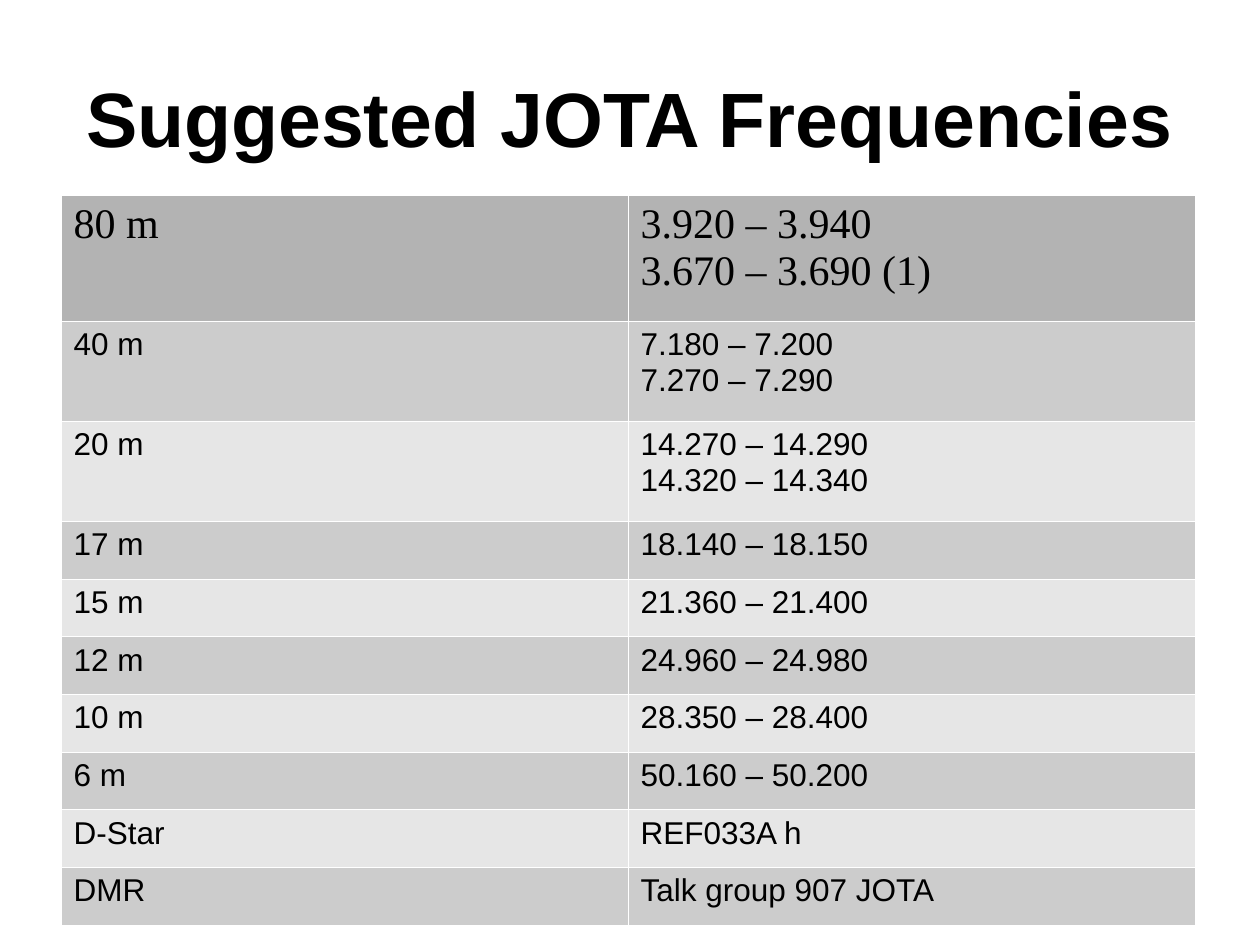
import pptx
import pptx.dml.color
import pptx.enum.text
import pptx.oxml
import pptx.oxml.ns
import pptx.util

RGBColor = pptx.dml.color.RGBColor
BLACK = RGBColor(0x00, 0x00, 0x00)
HEADER_GREY = RGBColor(0xB3, 0xB3, 0xB3)
BAND_GREYS = (RGBColor(0xCC, 0xCC, 0xCC), RGBColor(0xE6, 0xE6, 0xE6))
RULE_WHITE = RGBColor(0xFF, 0xFF, 0xFF)

PX_PER_INCH = 126
COLUMN_WIDTH = 567
HEADER_HEIGHT = 126
TWO_LINE_HEIGHT = 100
ONE_LINES_HEIGHT = 404  # shared equally by all one-line rows

FREQUENCIES = [
    ("80 m", "3.920 – 3.940\n3.670 – 3.690 (1)"),
    ("40 m", "7.180 – 7.200\n7.270 – 7.290"),
    ("20 m", "14.270 – 14.290\n14.320 – 14.340"),
    ("17 m", "18.140 – 18.150"),
    ("15 m", "21.360 – 21.400"),
    ("12 m", "24.960 – 24.980"),
    ("10 m", "28.350 – 28.400"),
    ("6 m", "50.160 – 50.200"),
    ("D-Star", "REF033A h"),
    ("DMR", "Talk group 907 JOTA"),
]


def px(length):
    return pptx.util.Emu(round(length * 914400 / PX_PER_INCH))


def write_text(frame, text, size=18, font="Arial", bold=False, align=None):
    """Write one paragraph per line of text."""
    frame.text = text
    for paragraph in frame.paragraphs:
        paragraph.alignment = align
        for run in paragraph.runs:
            run.font.size = pptx.util.Pt(size)
            run.font.name = font
            run.font.bold = bold
            run.font.color.rgb = BLACK


def add_title(slide, text):
    frame = slide.shapes.add_textbox(px(63), px(38), px(1134), px(157)).text_frame
    frame.word_wrap = True
    frame.vertical_anchor = pptx.enum.text.MSO_ANCHOR.MIDDLE
    frame.margin_left = frame.margin_top = 0
    frame.margin_right = frame.margin_bottom = 0
    write_text(frame, text, size=44, bold=True,
               align=pptx.enum.text.PP_ALIGN.CENTER)


def set_borders(cell, color, width):
    properties = cell._tc.get_or_add_tcPr()
    for position, side in enumerate(("lnL", "lnR", "lnT", "lnB")):
        properties.insert(position, pptx.oxml.parse_xml(
            f'<a:{side} {pptx.oxml.ns.nsdecls("a")} w="{pptx.util.Pt(width)}">'
            f'<a:solidFill><a:srgbClr val="{color}"/></a:solidFill></a:{side}>'))


def fill_cell(cell, text, color, **text_format):
    cell.fill.solid()
    cell.fill.fore_color.rgb = color
    set_borders(cell, RULE_WHITE, 0.06)
    write_text(cell.text_frame, text, **text_format)


def row_heights(rows):
    one_lines = sum("\n" not in frequency for _, frequency in rows)
    return [HEADER_HEIGHT] + [
        TWO_LINE_HEIGHT if "\n" in frequency else ONE_LINES_HEIGHT / one_lines
        for _, frequency in rows[1:]]


def add_frequency_table(slide, rows):
    heights = row_heights(rows)
    table = slide.shapes.add_table(
        len(rows), 2, px(61), px(195), px(2 * COLUMN_WIDTH), px(sum(heights))).table
    for column in table.columns:
        column.width = px(COLUMN_WIDTH)
    for index, (row, height, texts) in enumerate(zip(table.rows, heights, rows)):
        row.height = px(height)
        if index == 0:
            color = HEADER_GREY
            text_format = {"size": 24, "font": "Times New Roman"}
        else:
            color = BAND_GREYS[(index - 1) % 2]
            text_format = {}
        for cell, text in zip(row.cells, texts):
            fill_cell(cell, text, color, **text_format)


def main():
    presentation = pptx.Presentation()
    presentation.slide_width = px(1260)
    presentation.slide_height = px(945)
    slide = presentation.slides.add_slide(presentation.slide_layouts[6])
    add_title(slide, "Suggested JOTA Frequencies")
    add_frequency_table(slide, FREQUENCIES)
    presentation.save("out.pptx")


if __name__ == "__main__":
    main()
